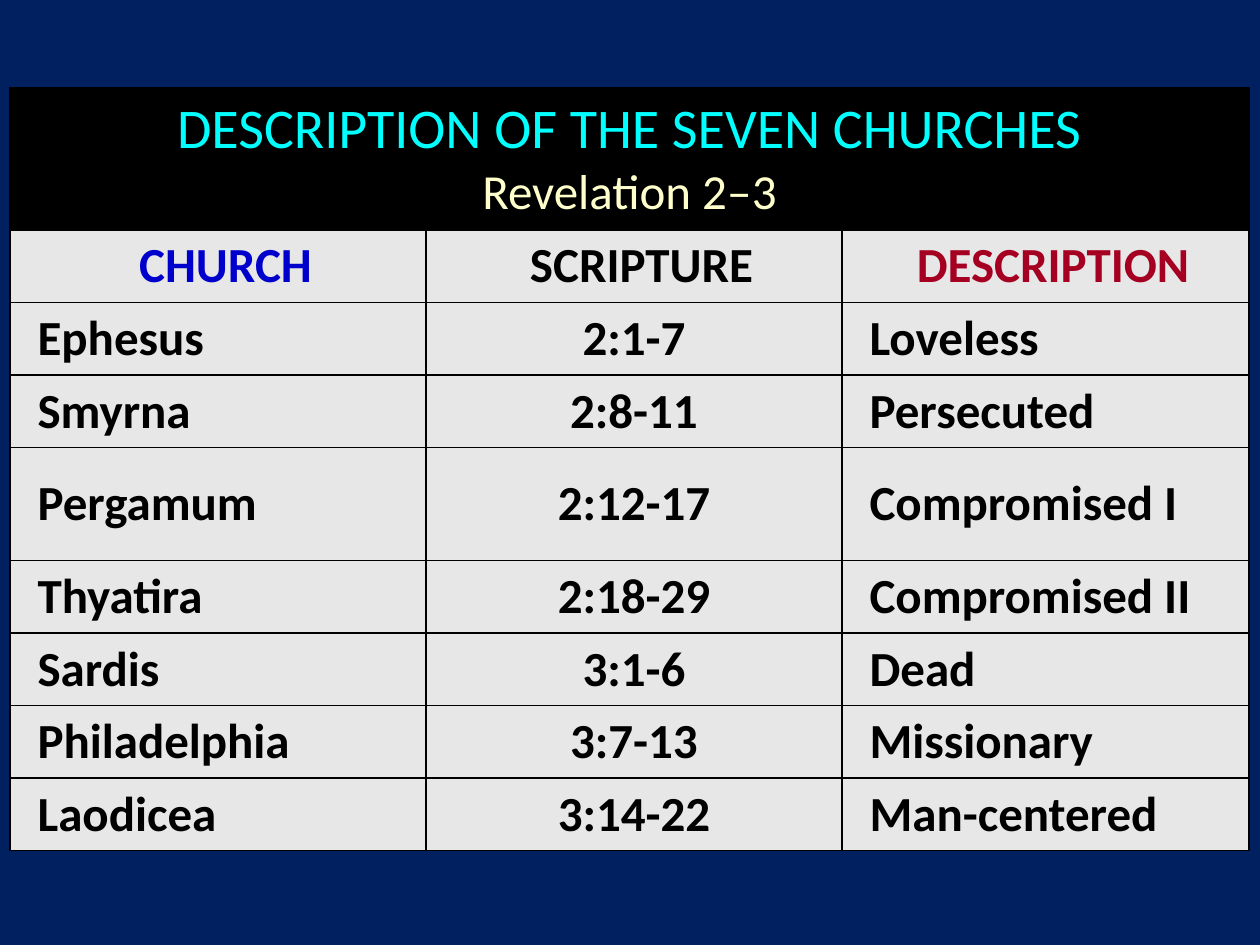
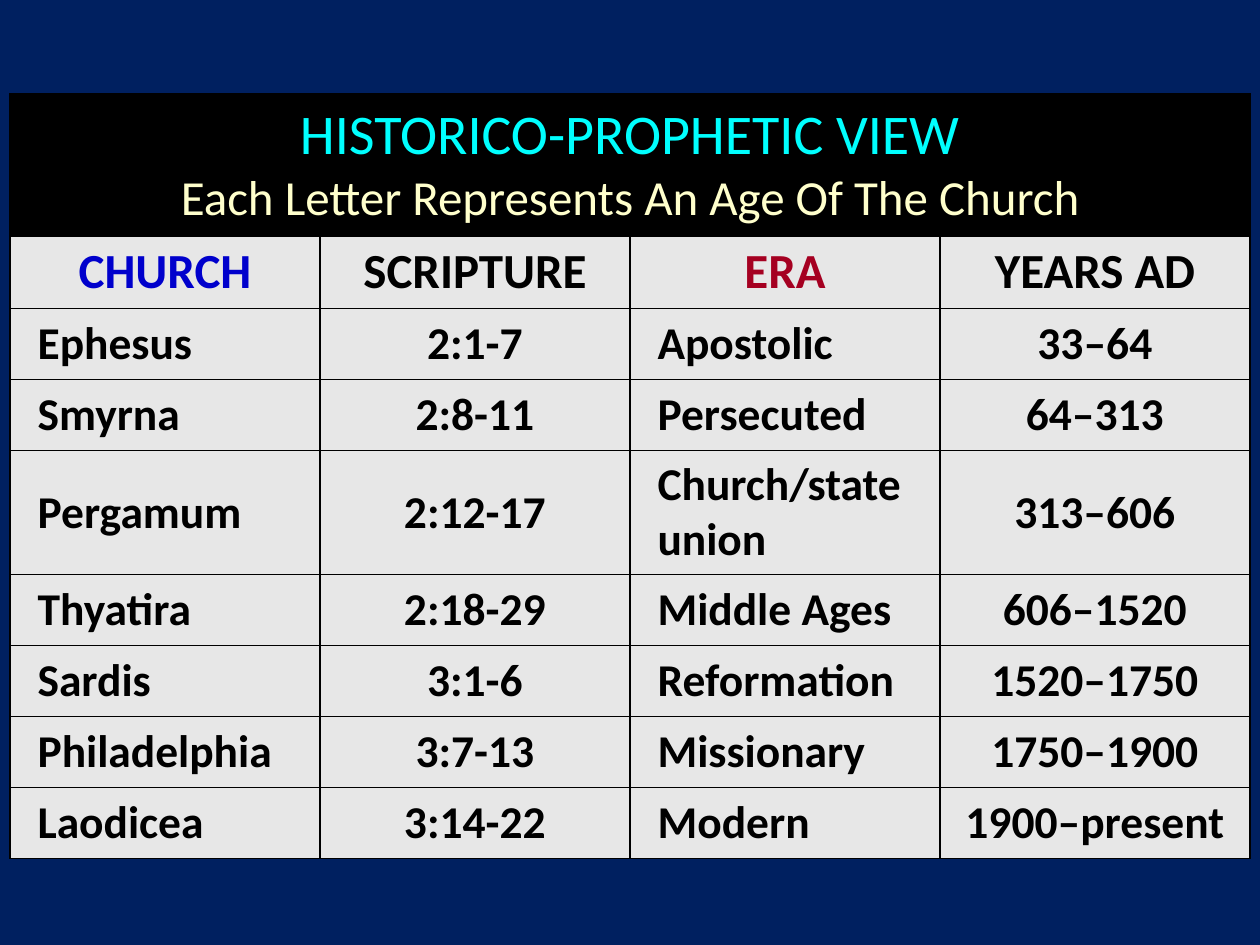
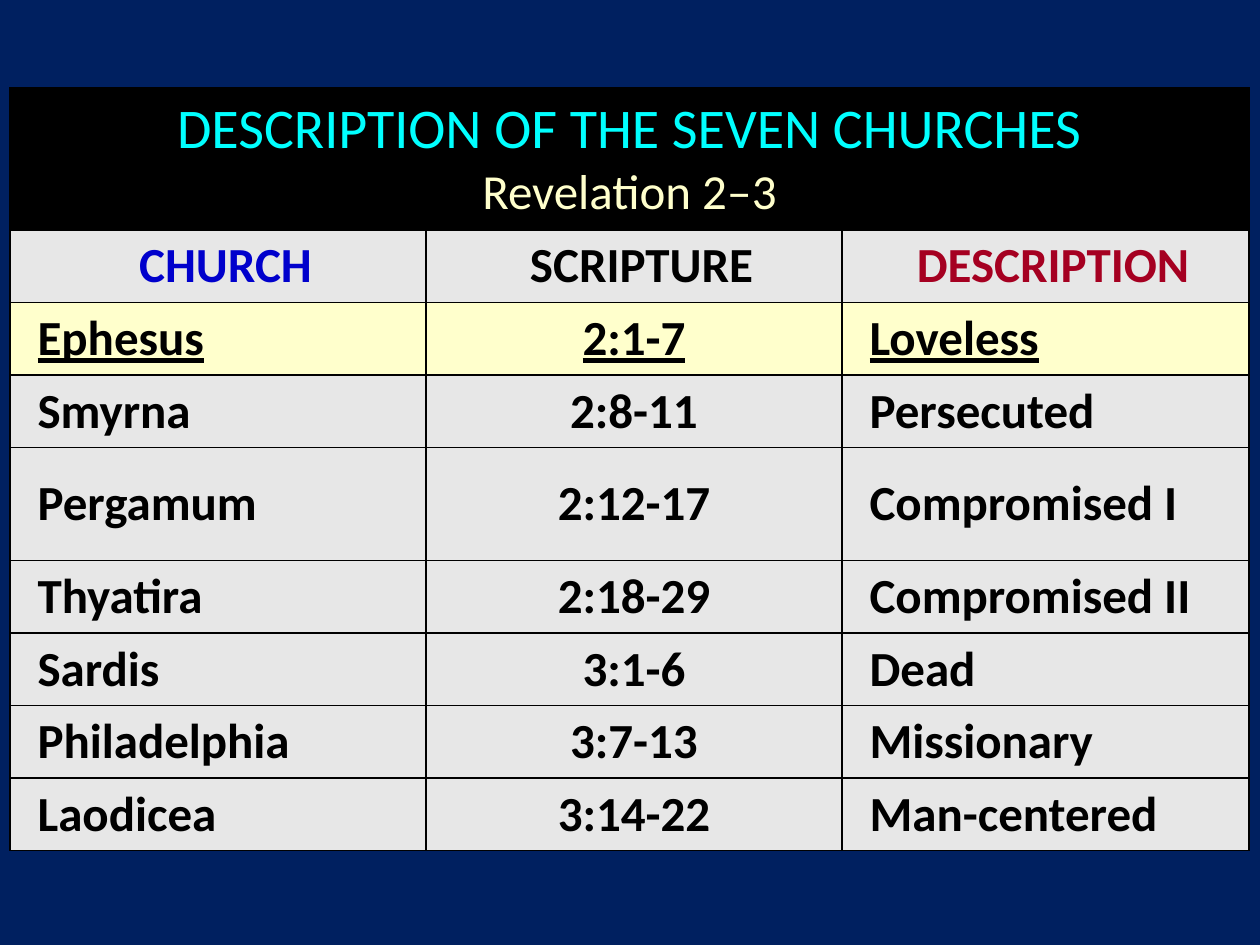
from lxml.etree import SubElement as Sub
from pptx import Presentation
from pptx.dml.color import RGBColor as Rgb
from pptx.enum.text import MSO_ANCHOR as Anchor, PP_ALIGN as Align
from pptx.oxml.ns import qn
from pptx.util import Emu, Pt

BACK, BLACK, GREY, CREAM = "002060", "000000", "E7E7E7", "FFFFCC"
CYAN, BLUE, RED = "00FFFF", "0000CC", "A50021"
HUES = [BLUE, BLACK, RED, BLACK]
FACE = "Calibri"
SIDES = ["L", "R", "T", "B"]
LEFT, INDENT = 10, 15
ROWS = [142, 72, 71, 71, 113, 71, 71, 71, 71]

CITIES = ["Ephesus", "Smyrna", "Pergamum", "Thyatira", "Sardis",
          "Philadelphia", "Laodicea"]
VERSES = ["2:1-7", "2:8-11", "2:12-17", "2:18-29", "3:1-6", "3:7-13", "3:14-22"]
TRAITS = ["Loveless", "Persecuted", "Compromised I", "Compromised II", "Dead",
          "Missionary", "Man-centered"]
ERAS = ["Apostolic", "Persecuted", "Church/state union", "Middle Ages",
        "Reformation", "Missionary", "Modern"]
YEARS = ["33–64", "64–313", "313–606", "606–1520", "1520–1750", "1750–1900",
         "1900–present"]

TRAIT_VIEW = {
    "title": ("DESCRIPTION OF THE SEVEN CHURCHES", "Revelation 2‒3"),
    "heads": ["CHURCH", "SCRIPTURE", "DESCRIPTION"],
    "body": [CITIES, VERSES, TRAITS],
    "top": 88, "cols": [416, 416, 407], "size": 28, "inset": INDENT,
}
ERA_VIEW = {
    "title": ("HISTORICO-PROPHETIC VIEW",
              "Each Letter Represents An Age Of The Church"),
    "heads": ["CHURCH", "SCRIPTURE", "ERA", "YEARS AD"],
    "body": [CITIES, VERSES, ERAS, YEARS],
    "top": 94, "cols": [310] * 4, "size": 26, "inset": 0,
}


def px(count):
    return Emu(round(count * 914400 / 126))


def paint(fill, hue):
    fill.solid()
    fill.fore_color.rgb = Rgb.from_string(hue)


def write(para, text, hue, size, **extra):
    run = para.add_run()
    run.text = text
    look = {"name": FACE, "size": Pt(size), **extra}
    for key, value in look.items():
        setattr(run.font, key, value)
    run.font.color.rgb = Rgb.from_string(hue)


def frame(cell):
    props = cell._tc.get_or_add_tcPr()
    for spot, side in enumerate(SIDES):
        line = Sub(props, qn(f"a:ln{side}"), w=str(Pt(1)))
        fill = Sub(line, qn("a:solidFill"))
        Sub(fill, qn("a:srgbClr"), val=BLACK)
        props.insert(spot, line)


def start(cell, hue, center, inset=0):
    paint(cell.fill, hue)
    cell.vertical_anchor = Anchor.MIDDLE
    para = cell.text_frame.paragraphs[0]
    para.alignment = Align.CENTER if center else Align.LEFT
    if inset:
        para._p.get_or_add_pPr().set("marL", str(px(inset)))
    return para


def head(grid, view):
    last = len(view["cols"]) - 1
    grid.cell(0, 0).merge(grid.cell(0, last))
    para = start(grid.cell(0, 0), BLACK, True)
    title, sub = view["title"]
    write(para, title, CYAN, 32)
    para.add_line_break()
    write(para, sub, CREAM, 28)
    for col, (text, hue) in enumerate(zip(view["heads"], HUES)):
        para = start(grid.cell(1, col), GREY, True, view["inset"])
        write(para, text, hue, 28, bold=True)


def body(grid, view, chosen):
    for col, texts in enumerate(view["body"]):
        center = col % 2 == 1
        for row, text in enumerate(texts):
            picked = row == chosen
            para = start(grid.cell(row + 2, col), CREAM if picked else GREY,
                         center, 0 if center else INDENT)
            write(para, text, BLACK, view["size"], bold=True, underline=picked)


def chart(deck, view, chosen=None):
    slide = deck.slides.add_slide(deck.slide_layouts[6])
    paint(slide.background.fill, BACK)
    cols = view["cols"]
    box = [px(n) for n in (LEFT, view["top"], sum(cols), sum(ROWS))]
    grid = slide.shapes.add_table(len(ROWS), len(cols), *box).table
    grid.first_row = grid.horz_banding = False
    for col, wide in zip(grid.columns, cols):
        col.width = px(wide)
    for row, high in zip(grid.rows, ROWS):
        row.height = px(high)
    head(grid, view)
    body(grid, view, chosen)
    for cell in grid.iter_cells():
        frame(cell)


def main():
    deck = Presentation()
    deck.slide_width, deck.slide_height = px(1260), px(945)
    chart(deck, TRAIT_VIEW)
    chart(deck, ERA_VIEW)
    chart(deck, TRAIT_VIEW, chosen=0)
    deck.save("out.pptx")


if __name__ == "__main__":
    main()
